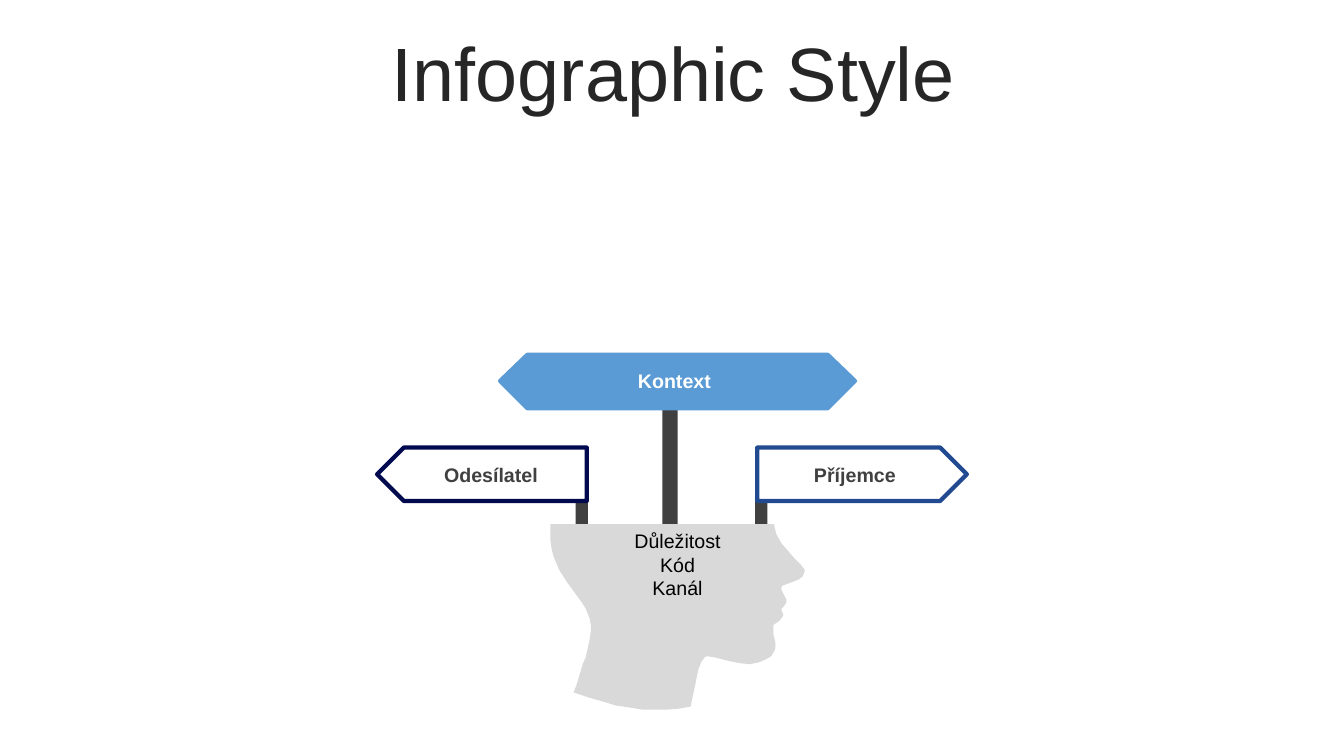
from pptx import Presentation
from pptx.dml.color import RGBColor
from pptx.enum.shapes import MSO_SHAPE
from pptx.enum.text import MSO_ANCHOR, PP_ALIGN
from pptx.util import Inches, Pt

HEADING = ("Infographic Style", (0.35, 0.37, 12.66, 0.79))
HEAD_WORDS = ["Důležitost", "Kód", "Kanál"]
LABELS = [
    ("Kontext", (5.81, 3.61, 1.76, 0.34), "FFFFFF"),
    ("Odesílatel", (4, 4.54, 1.74, 0.34), "404040"),
    ("Příjemce", (7.61, 4.54, 1.74, 0.34), "404040"),
]
POLES = [(6.57, 4.05, 0.15), (5.71, 4.44, 0.12), (7.49, 4.44, 0.12)]
POLE_FOOT = 5.46
SIGNS = [(7.51, "224A90", False), (3.74, "010A4F", True)]
SIGN_TOP, SIGN_WIDTH, SIGN_HEIGHT = 4.44, 2.08, 0.53
CONTEXT_BOX = (496, 352, 848, 405)
CONTEXT_TIP = 27
HEAD_OUTLINE = [
    (546, 520), (768, 520), (768, 522), (770, 530), (775, 539), (782, 547),
    (788, 554), (794, 560), (798, 565), (798, 567), (796, 572), (792, 575),
    (787, 577), (779, 580), (776, 581), (775, 583), (775, 585), (778, 591),
    (780, 595), (780, 598), (777, 602), (775, 604), (775, 605), (777, 610),
    (776, 612), (773, 616), (767, 620), (767, 629), (769, 637), (769, 643),
    (768, 646), (765, 651), (760, 654), (753, 657), (744, 659), (734, 658),
    (724, 656), (716, 654), (708, 652), (701, 651), (699, 652), (696, 656),
    (693, 663), (691, 672), (689, 682), (687, 691), (685, 701), (674, 703),
    (662, 704), (650, 704), (637, 704), (625, 702), (611, 700), (598, 696),
    (584, 692), (569, 687), (572, 679), (575, 669), (578, 659), (581, 652),
    (583, 643), (585, 634), (586, 626), (586, 620), (585, 614), (583, 609),
    (581, 604), (578, 599), (570, 588), (562, 577), (555, 566), (552, 559),
    (549, 552), (547, 544), (546, 536), (546, 528),
]


def color(value):
    return RGBColor.from_string(value)


def paint(shape, fill, line=None):
    shape.shadow.inherit = False
    shape.fill.solid()
    shape.fill.fore_color.rgb = color(fill)
    if line:
        shape.line.color.rgb = color(line)
        shape.line.width = Pt(3)
    else:
        shape.line.fill.background()


def write(shape, lines, anchor=MSO_ANCHOR.TOP, ink="000000", spacing=1, **font):
    frame = shape.text_frame
    frame.word_wrap = True
    frame.vertical_anchor = anchor
    frame.text = "\n".join(lines)
    for paragraph in frame.paragraphs:
        paragraph.alignment = PP_ALIGN.CENTER
        paragraph.line_spacing = spacing
        for key, value in {"name": "Arial", "size": Pt(14), **font}.items():
            setattr(paragraph.font, key, value)
        paragraph.font.color.rgb = color(ink)


def outline(shapes, points):
    builder = shapes.build_freeform(*points[0], scale=Inches(0.01))
    builder.add_line_segments(points[1:], close=True)
    return builder.convert_to_shape()


def main():
    deck = Presentation()
    deck.slide_width, deck.slide_height = Inches(13.33), Inches(7.5)
    shapes = deck.slides.add_slide(deck.slide_layouts[6]).shapes

    text, box = HEADING
    heading = shapes.add_textbox(*map(Inches, box))
    write(heading, [text], MSO_ANCHOR.MIDDLE, "262626", 0.9, size=Pt(54))

    for left, top, width in POLES:
        box = (left, top, width, POLE_FOOT - top)
        paint(shapes.add_shape(MSO_SHAPE.RECTANGLE, *map(Inches, box)), "404040")

    head = outline(shapes, HEAD_OUTLINE)
    paint(head, "D9D9D9")
    write(head, HEAD_WORDS)

    for left, edge, flipped in SIGNS:
        box = (left, SIGN_TOP, SIGN_WIDTH, SIGN_HEIGHT)
        sign = shapes.add_shape(MSO_SHAPE.PENTAGON, *map(Inches, box))
        paint(sign, "FFFFFF", edge)
        if flipped:
            sign._element.spPr.xfrm.set("flipH", "1")

    left, top, right, bottom = CONTEXT_BOX
    middle = (top + bottom) // 2
    inner_left, inner_right = left + CONTEXT_TIP, right - CONTEXT_TIP
    context = outline(shapes, [
        (inner_left, top), (inner_right, top), (right, middle),
        (inner_right, bottom), (inner_left, bottom), (left, middle),
    ])
    paint(context, "5A9BD5", "5A9BD5")

    for text, box, ink in LABELS:
        label = shapes.add_textbox(*map(Inches, box))
        write(label, [text], ink=ink, bold=True)

    deck.save("out.pptx")


if __name__ == "__main__":
    main()
